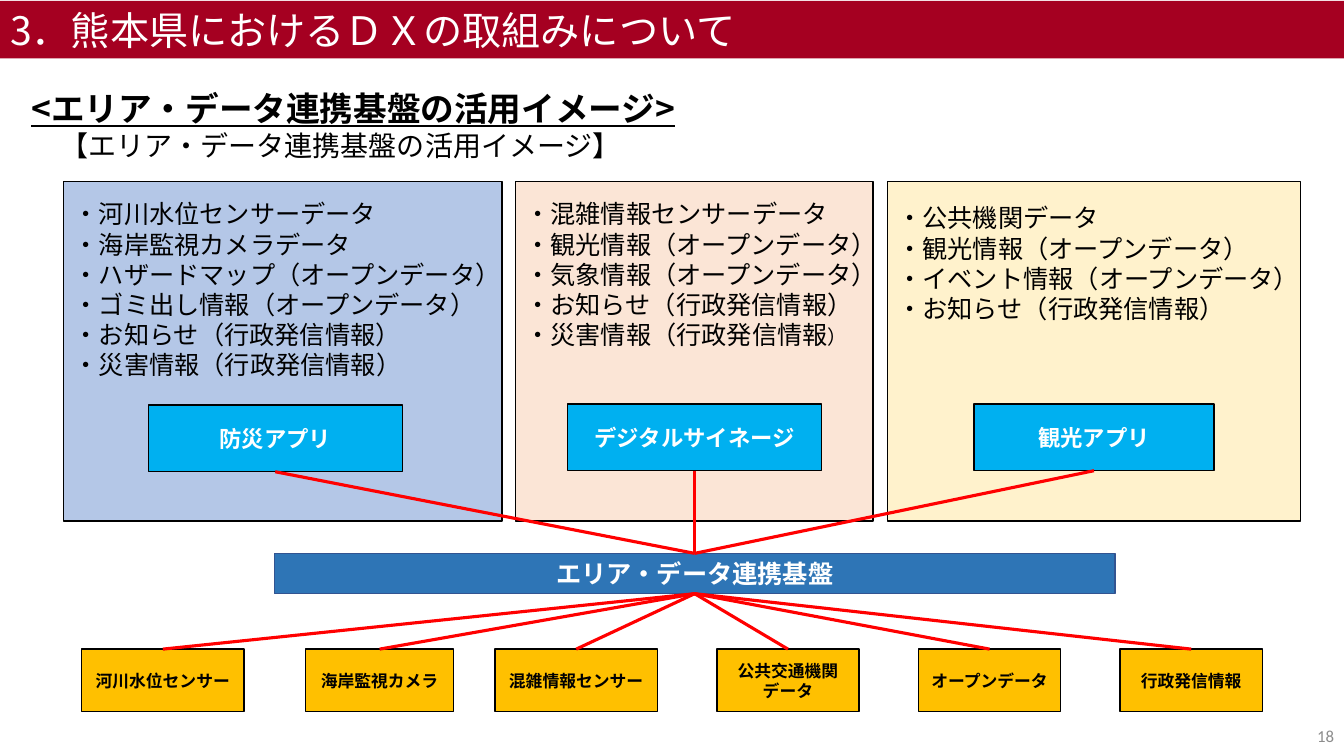
from lxml import etree
from pptx import Presentation
from pptx.dml.color import RGBColor
from pptx.enum.shapes import MSO_CONNECTOR, MSO_SHAPE
from pptx.enum.text import MSO_ANCHOR, MSO_AUTO_SIZE, PP_ALIGN
from pptx.oxml.ns import qn
from pptx.util import Inches, Pt

JAPANESE = "Noto Sans CJK JP"
LATIN = "Calibri"
TOP, BOTTOM = 0, 2  # connection sites of a rectangle

# left, width, fill, list top, list width, list height, list lines
PANELS = [
    (0.63, 4.35, "B4C7E7", 1.92, 4.86, 1.92,
     ["・河川水位センサーデータ", "・海岸監視カメラデータ",
      "・ハザードマップ（オープンデータ）", "・ゴミ出し情報（オープンデータ）",
      "・お知らせ（行政発信情報）", "・災害情報（行政発信情報）"]),
    (5.11, 3.55, "FBE5D6", 1.92, 3.92, 1.62,
     ["・混雑情報センサーデータ", "・観光情報（オープンデータ）",
      "・気象情報（オープンデータ）", "・お知らせ（行政発信情報）",
      "・災害情報（行政発信情報"]),
    (8.8, 4.1, "FFF2CC", 1.96, 4.25, 1.31,
     ["・公共機関データ", "・観光情報（オープンデータ）",
      "・イベント情報（オープンデータ）", "・お知らせ（行政発信情報）"]),
]
APPS = [(1.47, 4.02, 2.52, "防災アプリ"),
        (5.63, 4.01, 2.52, "デジタルサイネージ"),
        (9.66, 4.01, 2.38, "観光アプリ")]
SOURCES = [(0.81, 1.61, ["河川水位センサー"]),
           (3.03, 1.47, ["海岸監視カメラ"]),
           (4.91, 1.61, ["混雑情報センサー"]),
           (7.11, 1.41, ["公共交通機関", "データ"]),
           (9.11, 1.41, ["オープンデータ"]),
           (11.11, 1.41, ["行政発信情報"])]


def color(value):
    return RGBColor.from_string(value)


def place(shape, left, top, width, height):
    shape.left, shape.top = Inches(left), Inches(top)
    shape.width, shape.height = Inches(width), Inches(height)


def format_span(span, size, font, ink, bold=False, underline=False):
    span.font.size = Pt(size)
    span.font.name = font
    span.font.color.rgb = color(ink)
    span.font.bold = bold
    span.font.underline = underline
    if font == JAPANESE:
        east_asian = etree.SubElement(span.font._element, qn("a:ea"))
        east_asian.set("typeface", font)


def write(shape, lines, size, font, ink="000000", align=PP_ALIGN.LEFT,
          anchor=MSO_ANCHOR.MIDDLE, spacing=1.0, bold=False, underline=False):
    """Fill a shape with one unbulleted paragraph per line."""
    frame = shape.text_frame
    frame.text = "\n".join(lines)
    frame.word_wrap = True
    frame.auto_size = MSO_AUTO_SIZE.NONE
    frame.vertical_anchor = anchor
    for para in frame.paragraphs:
        para.alignment = align
        para.line_spacing = spacing
        para.space_before = Pt(0)
        if shape.is_placeholder:
            properties = para._p.get_or_add_pPr()
            properties.set("marL", "0")
            properties.set("indent", "0")
            etree.SubElement(properties, qn("a:buNone"))
        for span in para.runs:
            format_span(span, size, font, ink, bold, underline)


def add_box(page, left, top, width, height, fill, line="000000"):
    box = page.shapes.add_shape(MSO_SHAPE.RECTANGLE, Inches(left), Inches(top),
                                Inches(width), Inches(height))
    box.shadow.inherit = False
    box.fill.solid()
    box.fill.fore_color.rgb = color(fill)
    box.line.color.rgb = color(line)
    box.line.width = Pt(1)
    return box


def add_label_box(page, at, fill, lines, size, ink, line="000000"):
    box = add_box(page, *at, fill, line)
    write(box, lines, size, LATIN, ink, PP_ALIGN.CENTER, bold=True)
    return box


def add_text(page, at, lines, size, font, **style):
    box = page.shapes.add_textbox(*map(Inches, at))
    write(box, lines, size, font, **style)


def link(page, upper, lower):
    """Join the bottom of the upper box to the top of the lower one."""
    line = page.shapes.add_connector(MSO_CONNECTOR.STRAIGHT, 0, 0, 0, 0)
    line.begin_connect(upper, BOTTOM)
    line.end_connect(lower, TOP)
    line.line.color.rgb = color("FF0000")
    line.line.width = Pt(2.25)
    etree.SubElement(line._element.spPr, qn("a:effectLst"))


def add_headings(page, heading):
    title = page.shapes.title
    place(title, 0, 0.01, 13.33, 0.57)
    title.fill.solid()
    title.fill.fore_color.rgb = color("A50021")
    write(title, ["3．熊本県におけるＤＸの取組みについて"], 28, JAPANESE, "FFFFFF")
    place(heading, 0.21, 0.71, 7.73, 0.52)
    write(heading, ["<エリア・データ連携基盤の活用イメージ>"], 24, JAPANESE,
          spacing=1.5, bold=True, underline=True)
    add_text(page, (0.5, 1.23, 7.61, 0.57), ["【エリア・データ連携基盤の活用イメージ】"],
             20, JAPANESE, align=PP_ALIGN.JUSTIFY, anchor=MSO_ANCHOR.TOP)


def add_panels(page, lists):
    for body, panel in zip(lists, PANELS):
        left, width, fill, list_top, list_width, list_height, lines = panel
        add_box(page, left, 1.8, width, 3.37, fill)
        place(body, left, list_top, list_width, list_height)
        write(body, lines, 18, JAPANESE, anchor=MSO_ANCHOR.TOP, spacing=Pt(21.6))
        body.element.getparent().append(body.element)  # in front of its panel
    small_bracket = lists[1].text_frame.paragraphs[-1].add_run()
    small_bracket.text = "）"
    format_span(small_bracket, 14, JAPANESE, "000000")


def add_diagram(page):
    platform = add_label_box(page, (2.72, 5.49, 8.34, 0.4), "2E75B6",
                             ["エリア・データ連携基盤"], 18, "FFFFFF", "325491")
    for left, top, width, name in APPS:
        app = add_label_box(page, (left, top, width, 0.66), "00B0F0", [name],
                            16, "FFFFFF")
        link(page, app, platform)
    for left, width, lines in SOURCES:
        source = add_label_box(page, (left, 6.44, width, 0.62), "FFC000", lines,
                               12, "000000")
        link(page, platform, source)


def main():
    deck = Presentation()
    deck.slide_width, deck.slide_height = Inches(13.33), Inches(7.5)
    comparison_layout = deck.slide_layouts[4]
    page = deck.slides.add_slide(comparison_layout)
    heading, *lists = list(page.placeholders)[1:]
    add_headings(page, heading)
    add_panels(page, lists)
    add_diagram(page)
    add_text(page, (10.33, 7.1, 3, 0.4), ["18"], 12, LATIN, ink="8C8C8C",
             align=PP_ALIGN.RIGHT)
    deck.save("out.pptx")


if __name__ == "__main__":
    main()
